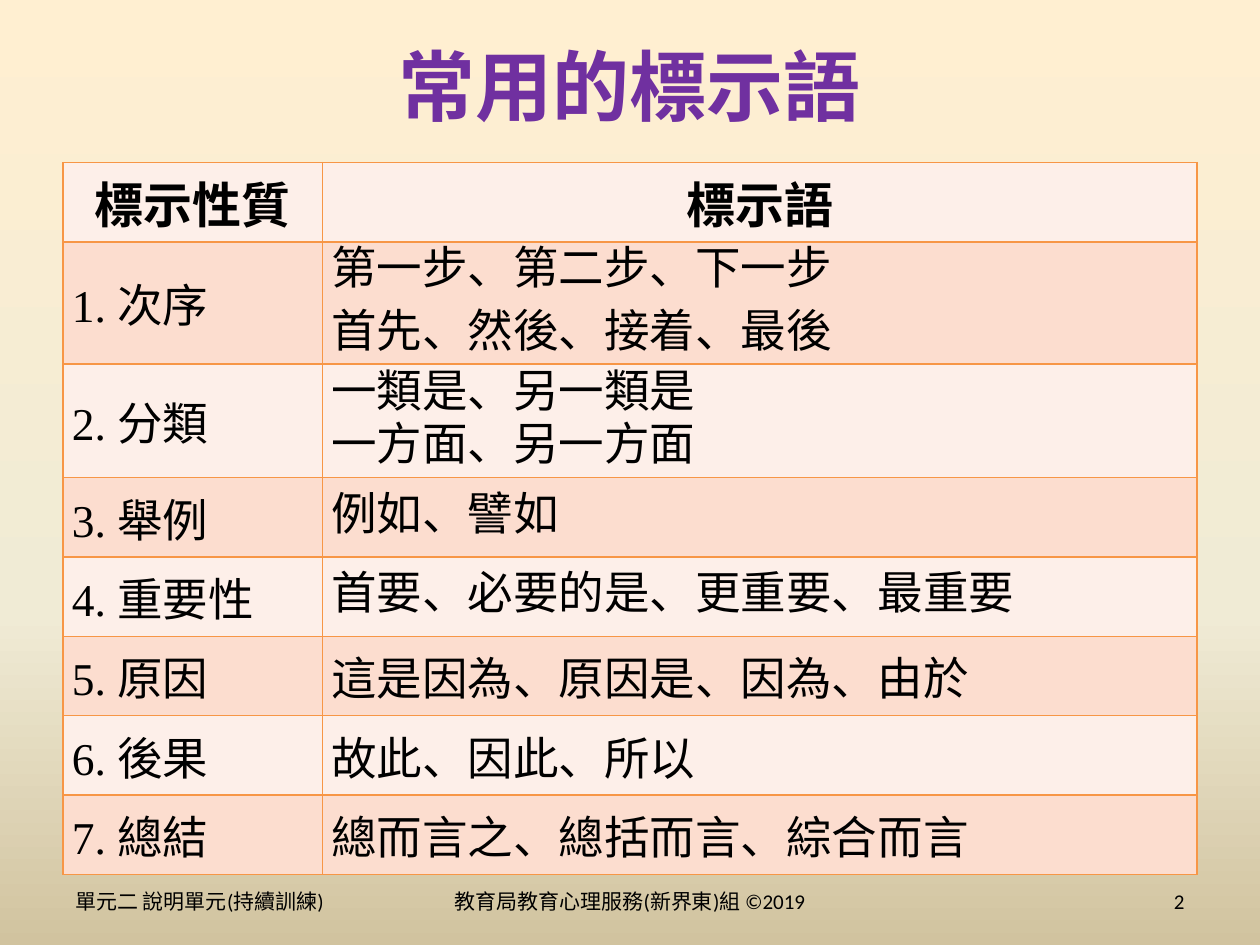
from copy import deepcopy
from dataclasses import dataclass

from lxml import etree
from pptx import Presentation
from pptx.dml.color import RGBColor
from pptx.enum.text import MSO_ANCHOR, PP_ALIGN
from pptx.oxml.ns import qn
from pptx.util import Inches, Pt

LEFT, CENTER, RIGHT = PP_ALIGN.LEFT, PP_ALIGN.CENTER, PP_ALIGN.RIGHT
MIDDLE = MSO_ANCHOR.MIDDLE

BLACK = RGBColor(0x00, 0x00, 0x00)
PURPLE = RGBColor(0x70, 0x30, 0xA0)
ORANGE = RGBColor(0xF7, 0x96, 0x46)
BANDS = (RGBColor(0xFD, 0xEF, 0xE9), RGBColor(0xFC, 0xDD, 0xCF))
BACKGROUND_STOPS = (
    (0, RGBColor(0xFF, 0xEF, 0xD1)),
    (0.65, RGBColor(0xF0, 0xEB, 0xD5)),
    (1, RGBColor(0xD1, 0xC3, 0x9F)),
)

SLIDE_WIDTH, SLIDE_HEIGHT = 10, 7.5
MARGIN = SLIDE_WIDTH / 20
CONTENT_WIDTH = SLIDE_WIDTH - 2 * MARGIN
TABLE_TOP = 1.29
COLUMN_WIDTHS = (2.06, 6.94)
ROW_HEIGHT = 0.63
FOOTER_TOP, FOOTER_HEIGHT = 6.95, 0.4
SIDE_FOOTER_WIDTH, MIDDLE_FOOTER_WIDTH = 2.33, 3.17

TITLE_FONT = {"name": "Times New Roman", "size": Pt(44), "bold": True}
HEADER_FONT = {"name": "Times New Roman", "size": Pt(28), "bold": True}
BODY_FONT = {"name": "Times New Roman", "size": Pt(26), "bold": False}
FOOTER_FONT = {"name": "Calibri", "size": Pt(12)}
PLAIN = {}
FIXED = {"line_spacing": Pt(30)}
SPACED = {"line_spacing": Pt(30), "space_after": Pt(6)}


@dataclass(frozen=True)
class Line:
    text: str
    spacing: dict


@dataclass(frozen=True)
class Signal:
    nature: str
    phrases: tuple[Line, ...]
    height: float = ROW_HEIGHT


@dataclass(frozen=True)
class Label:
    text: str
    left: float
    top: float
    width: float
    height: float
    align: PP_ALIGN
    font: dict
    color: RGBColor = BLACK


SIGNALS = (
    Signal("次序", (Line("第一步、第二步、下一步", SPACED),
                  Line("首先、然後、接着、最後", SPACED)), 0.97),
    Signal("分類", (Line("一類是、另一類是", FIXED),
                  Line("一方面、另一方面", SPACED)), 0.9),
    Signal("舉例", (Line("例如、譬如", FIXED),)),
    Signal("重要性", (Line("首要、必要的是、更重要、最重要", SPACED),)),
    Signal("原因", (Line("這是因為、原因是、因為、由於", PLAIN),)),
    Signal("後果", (Line("故此、因此、所以", PLAIN),)),
    Signal("總結", (Line("總而言之、總括而言、綜合而言", PLAIN),)),
)


def footer(text: str, left: float, width: float, align: PP_ALIGN) -> Label:
    return Label(text, left, FOOTER_TOP, width, FOOTER_HEIGHT, align, FOOTER_FONT)


LABELS = (
    Label("常用的標示語", MARGIN, 0.05, CONTENT_WIDTH, 1.25, CENTER, TITLE_FONT, PURPLE),
    footer("單元二 說明單元(持續訓練)", MARGIN, SIDE_FOOTER_WIDTH, LEFT),
    footer("教育局教育心理服務(新界東)組 ©2019",
           (SLIDE_WIDTH - MIDDLE_FOOTER_WIDTH) / 2, MIDDLE_FOOTER_WIDTH, CENTER),
    footer("2", SLIDE_WIDTH - MARGIN - SIDE_FOOTER_WIDTH, SIDE_FOOTER_WIDTH, RIGHT),
)


def apply(target, values: dict) -> None:
    for attribute, value in values.items():
        setattr(target, attribute, value)


def write(frame, lines: tuple[Line, ...], align: PP_ALIGN, font: dict, color: RGBColor) -> None:
    for index, line in enumerate(lines):
        paragraph = frame.add_paragraph() if index else frame.paragraphs[0]
        paragraph.alignment = align
        apply(paragraph, line.spacing)
        run = paragraph.add_run()
        run.text = line.text
        apply(run.font, font)
        run.font.color.rgb = color


def paint_background(slide) -> None:
    fill = slide.background.fill
    fill.gradient()
    fill.gradient_angle = 270
    stop_list = next(slide.element.iter(qn("a:gsLst")))
    stop_list.append(deepcopy(stop_list[0]))
    for stop, (position, color) in zip(fill.gradient_stops, BACKGROUND_STOPS):
        stop.position = position
        stop.color.rgb = color


def add_label(slide, label: Label) -> None:
    box = slide.shapes.add_textbox(
        *map(Inches, (label.left, label.top, label.width, label.height)))
    apply(box.text_frame, {"word_wrap": True, "vertical_anchor": MIDDLE})
    write(box.text_frame, (Line(label.text, PLAIN),), label.align, label.font, label.color)


def outline(cell) -> None:
    """Draw the four cell borders, which must come before the fill in the XML."""
    properties = cell._tc.get_or_add_tcPr()
    for index, side in enumerate(("lnL", "lnR", "lnT", "lnB")):
        border = etree.Element(qn(f"a:{side}"), w=str(Pt(1)))
        solid = etree.SubElement(border, qn("a:solidFill"))
        etree.SubElement(solid, qn("a:srgbClr"), val=str(ORANGE))
        properties.insert(index, border)


def fill_cell(cell, lines: tuple[Line, ...], align: PP_ALIGN, font: dict, band: RGBColor) -> None:
    apply(cell, {
        "margin_left": Inches(0.07), "margin_right": Inches(0.07),
        "margin_top": 0, "margin_bottom": 0, "vertical_anchor": MIDDLE,
    })
    cell.fill.solid()
    cell.fill.fore_color.rgb = band
    outline(cell)
    write(cell.text_frame, lines, align, font, BLACK)


def add_signal_table(slide) -> None:
    heights = (ROW_HEIGHT, *(signal.height for signal in SIGNALS))
    table = slide.shapes.add_table(
        len(heights), len(COLUMN_WIDTHS), Inches(MARGIN), Inches(TABLE_TOP),
        Inches(sum(COLUMN_WIDTHS)), Inches(sum(heights))).table
    for column, width in zip(table.columns, COLUMN_WIDTHS):
        column.width = Inches(width)
    for row, height in zip(table.rows, heights):
        row.height = Inches(height)

    for column, heading in enumerate(("標示性質", "標示語")):
        fill_cell(table.cell(0, column), (Line(heading, PLAIN),), CENTER, HEADER_FONT, BANDS[0])
    for number, signal in enumerate(SIGNALS, start=1):
        nature = (Line(f"{number}. {signal.nature}", PLAIN),)
        for column, lines in enumerate((nature, signal.phrases)):
            fill_cell(table.cell(number, column), lines, LEFT, BODY_FONT, BANDS[number % 2])


def main() -> None:
    presentation = Presentation()
    presentation.slide_width = Inches(SLIDE_WIDTH)
    presentation.slide_height = Inches(SLIDE_HEIGHT)
    slide = presentation.slides.add_slide(presentation.slide_layouts[6])
    paint_background(slide)
    add_signal_table(slide)
    for label in LABELS:
        add_label(slide, label)
    presentation.save("out.pptx")


if __name__ == "__main__":
    main()
